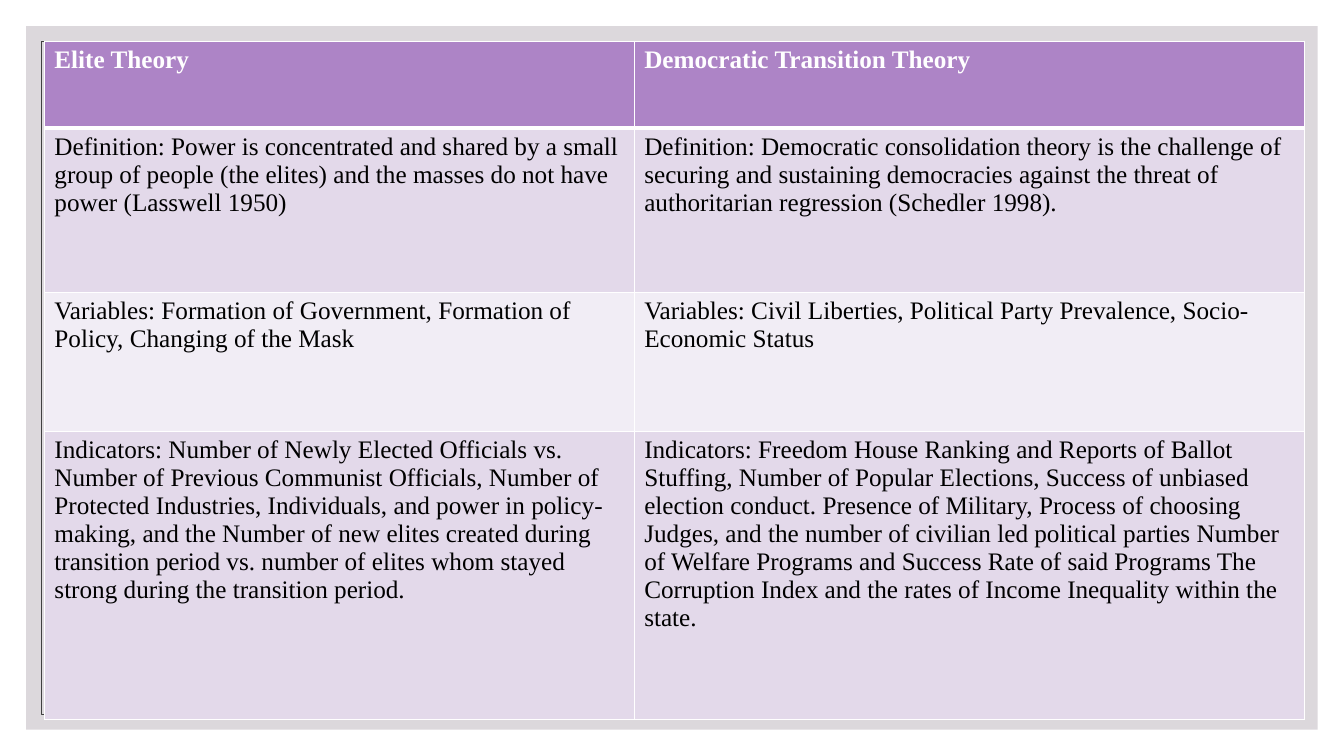
from lxml.etree import SubElement
from pptx import Presentation
from pptx.dml.color import RGBColor as Color
from pptx.enum.shapes import MSO_SHAPE as Shape
from pptx.oxml.ns import qn
from pptx.util import Inches, Pt

SLIDE_SIZE = (13.33, 7.5)
COLORS = {
    "backdrop": "DCD8DC",
    "frame": "404040",
    "header": "AD84C6",
    "odd_row": "E3D9EA",
    "even_row": "F1EDF5",
    "white": "FFFFFF",
    "black": "000000",
}
COLUMNS = (5.85, 6.65)
ROWS = (0.86, 1.63, 1.38, 2.86)
THEORIES = (
    ("Elite Theory", "Democratic Transition Theory"),
    (
        "Definition: Power is concentrated and shared by a small group of people "
        "(the elites) and the masses do not have power (Lasswell 1950)",
        "Definition: Democratic consolidation theory is the challenge of securing and "
        "sustaining democracies against the threat of authoritarian regression "
        "(Schedler 1998).",
    ),
    (
        "Variables: Formation of Government, Formation of Policy, Changing of the Mask",
        "Variables: Civil Liberties, Political Party Prevalence, Socio-Economic Status",
    ),
    (
        "Indicators: Number of Newly Elected Officials vs. Number of Previous Communist "
        "Officials, Number of Protected Industries, Individuals, and power in "
        "policy-making, and the Number of new elites created during transition period "
        "vs. number of elites whom stayed strong during the transition period.",
        "Indicators: Freedom House Ranking and Reports of Ballot Stuffing, Number of "
        "Popular Elections, Success of unbiased election conduct. Presence of Military, "
        "Process of choosing Judges, and the number of civilian led political parties "
        "Number of Welfare Programs and Success Rate of said Programs The Corruption "
        "Index and the rates of Income Inequality within the state.",
    ),
)


def color(name):
    """Return the named colour."""
    return Color.from_string(COLORS[name])


def add_panel(slide, margin, fill=None, line=None):
    """Add a rectangle inset by the same margin on every side of the slide."""
    width, height = (side - 2 * margin for side in SLIDE_SIZE)
    panel = slide.shapes.add_shape(
        Shape.RECTANGLE, *map(Inches, (margin, margin, width, height))
    )
    panel.shadow.inherit = False
    if fill:
        panel.fill.solid()
        panel.fill.fore_color.rgb = color(fill)
    else:
        panel.fill.background()
    if line:
        panel.line.color.rgb = color(line)
        panel.line.width = Pt(0.5)
    else:
        panel.line.fill.background()


def set_borders(cell, widths):
    """Draw white cell borders, given a width in points for each side."""
    properties = cell._tc.get_or_add_tcPr()
    for position, (side, width) in enumerate(widths.items()):
        border = SubElement(properties, qn(f"a:ln{side}"), w=str(Pt(width)))
        fill = SubElement(border, qn("a:solidFill"))
        SubElement(fill, qn("a:srgbClr"), val=COLORS["white"])
        properties.insert(position, border)


def fill_cell(cell, text, fill, font_format, widths):
    """Write one cell with its fill, font and borders."""
    cell.text = text
    cell.fill.solid()
    cell.fill.fore_color.rgb = color(fill)
    font = cell.text_frame.paragraphs[0].runs[0].font
    for name, value in font_format.items():
        setattr(font, name, value)
    font.color.rgb = color("white" if font_format["bold"] else "black")
    set_borders(cell, widths)


def add_theory_table(slide, left, top):
    """Add the table that compares the two theories."""
    frame = slide.shapes.add_table(
        len(ROWS), len(COLUMNS), *map(Inches, (left, top, sum(COLUMNS), sum(ROWS)))
    )
    table = frame.table
    for column, width in zip(table.columns, COLUMNS):
        column.width = Inches(width)
    for index, (row, height, texts) in enumerate(zip(table.rows, ROWS, THEORIES)):
        row.height = Inches(height)
        is_header = index == 0
        fill = "header" if is_header else ("even_row", "odd_row")[index % 2]
        font_format = {"name": "Times New Roman", "size": Pt(18), "bold": is_header}
        widths = {
            "L": 1,
            "R": 1,
            "T": 3 if index == 1 else 1,
            "B": 3 if is_header else 1,
        }
        for cell, text in zip(row.cells, texts):
            fill_cell(cell, text, fill, font_format, widths)


def main():
    """Build the slide and save it."""
    presentation = Presentation()
    presentation.slide_width, presentation.slide_height = map(Inches, SLIDE_SIZE)
    slide = presentation.slides.add_slide(presentation.slide_layouts[6])
    add_panel(slide, 0.26, fill="backdrop")
    add_panel(slide, 0.41, line="frame")
    add_theory_table(slide, 0.44, 0.41)
    presentation.save("out.pptx")


if __name__ == "__main__":
    main()
